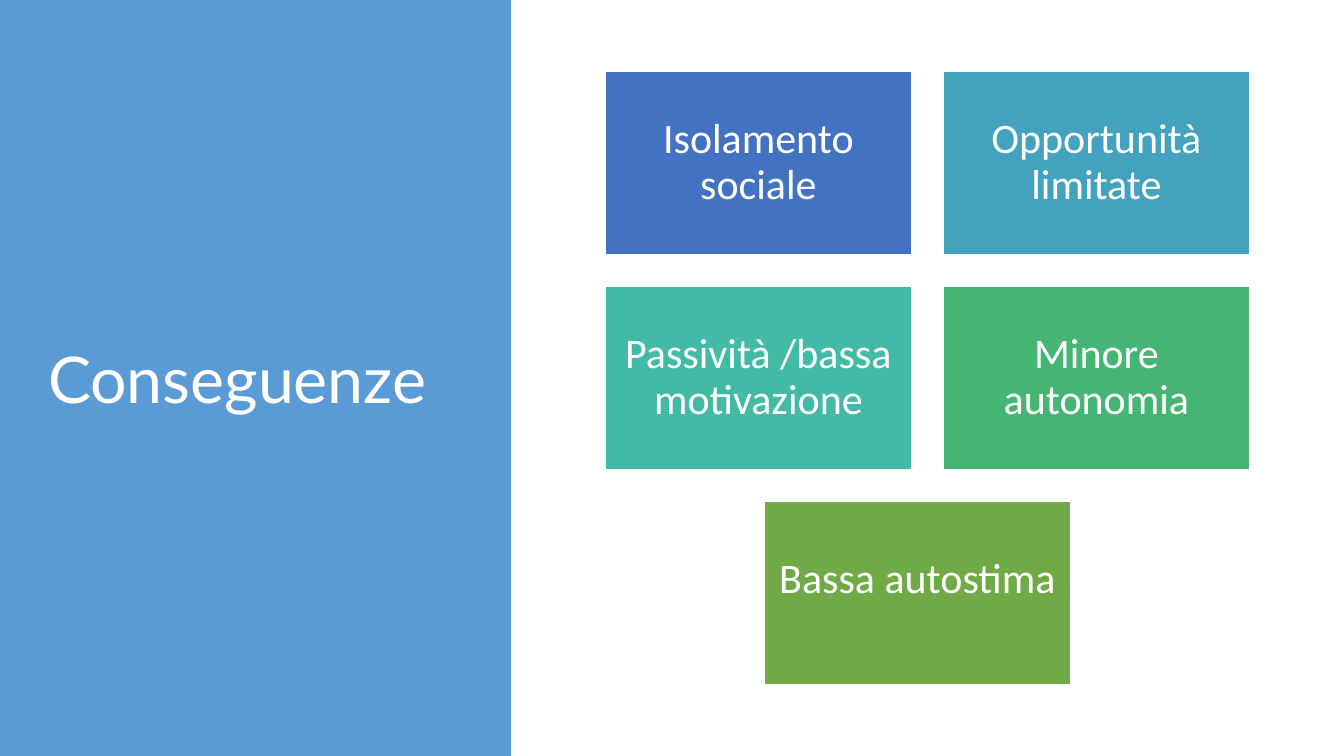
from pptx import Presentation
from pptx.dml.color import RGBColor
from pptx.enum.shapes import MSO_SHAPE as Preset
from pptx.enum.text import MSO_ANCHOR as Anchor, MSO_AUTO_SIZE as AutoSize, PP_ALIGN as Align
from pptx.util import Emu, Pt

WHITE = RGBColor(0xFF, 0xFF, 0xFF)
PANEL_BLUE = RGBColor(0x5B, 0x9B, 0xD5)

TITLE = "Conseguenze"
CONSEQUENCES = [
    ("Isolamento sociale", RGBColor(0x43, 0x72, 0xC3)),
    ("Opportunità limitate", RGBColor(0x43, 0xA2, 0xBE)),
    ("Passività /bassa motivazione", RGBColor(0x43, 0xBA, 0xA5)),
    ("Minore autonomia", RGBColor(0x44, 0xB5, 0x73)),
    ("Bassa autostima", RGBColor(0x6F, 0xAA, 0x47)),
]

# Lengths in px
SLIDE_WIDTH, SLIDE_HEIGHT = 1344, 756
PANEL_WIDTH = 511
TITLE_BOX = (38, 79, 437, 607)
GRID_LEFT, GRID_TOP = 605, 71
CARD_WIDTH, CARD_HEIGHT = 307, 184
COLUMN_STEP, ROW_STEP = 338, 215
COLUMNS = 2
CARD_INSET = 12
LAST_CARD_SHIFT = 10   # last card sits left of the grid's centre
LAST_TEXT_RAISE = 13   # and its text above the card's middle


def px(length):
    return Emu(round(length * 914400 / 100.8))


def write_text(shape, text, *, font, size, align, insets):
    frame = shape.text_frame
    frame.word_wrap = True
    frame.auto_size = AutoSize.NONE
    frame.vertical_anchor = Anchor.MIDDLE
    left, top, right, bottom = map(px, insets)
    frame.margin_left, frame.margin_top = left, top
    frame.margin_right, frame.margin_bottom = right, bottom
    paragraph = frame.paragraphs[0]
    paragraph.alignment = align
    paragraph.line_spacing = 0.9
    run = paragraph.add_run()
    run.text = text
    run.font.name = font
    run.font.size = Pt(size)
    run.font.color.rgb = WHITE


def add_rectangle(slide, left, top, width, height, fill):
    shape = slide.shapes.add_shape(Preset.RECTANGLE, px(left), px(top), px(width), px(height))
    shape.shadow.inherit = False
    shape.fill.solid()
    shape.fill.fore_color.rgb = fill
    shape.line.fill.background()
    return shape


presentation = Presentation()
presentation.slide_width, presentation.slide_height = px(SLIDE_WIDTH), px(SLIDE_HEIGHT)
slide = presentation.slides.add_slide(presentation.slide_layouts[5])

# Left panel, with the title in front of it
panel = add_rectangle(slide, 0, 0, PANEL_WIDTH, SLIDE_HEIGHT, PANEL_BLUE)
title = slide.shapes.title
title.left, title.top, title.width, title.height = map(px, TITLE_BOX)
write_text(title, TITLE, font="Lato", size=46, align=Align.LEFT, insets=(10, 5, 10, 5))
panel._element.addnext(title._element)

# Cards in two columns, the odd one out below
for index, (label, color) in enumerate(CONSEQUENCES):
    row, column = divmod(index, COLUMNS)
    left = GRID_LEFT + column * COLUMN_STEP
    bottom_inset = CARD_INSET
    if index == len(CONSEQUENCES) - 1:
        left += COLUMN_STEP / 2 - LAST_CARD_SHIFT
        bottom_inset += 2 * LAST_TEXT_RAISE
    card = add_rectangle(slide, left, GRID_TOP + row * ROW_STEP, CARD_WIDTH, CARD_HEIGHT, color)
    card.line.color.rgb = WHITE
    card.line.width = Pt(1)
    write_text(card, label, font="Calibri", size=30, align=Align.CENTER,
               insets=(CARD_INSET, CARD_INSET, CARD_INSET, bottom_inset))

presentation.save("out.pptx")
